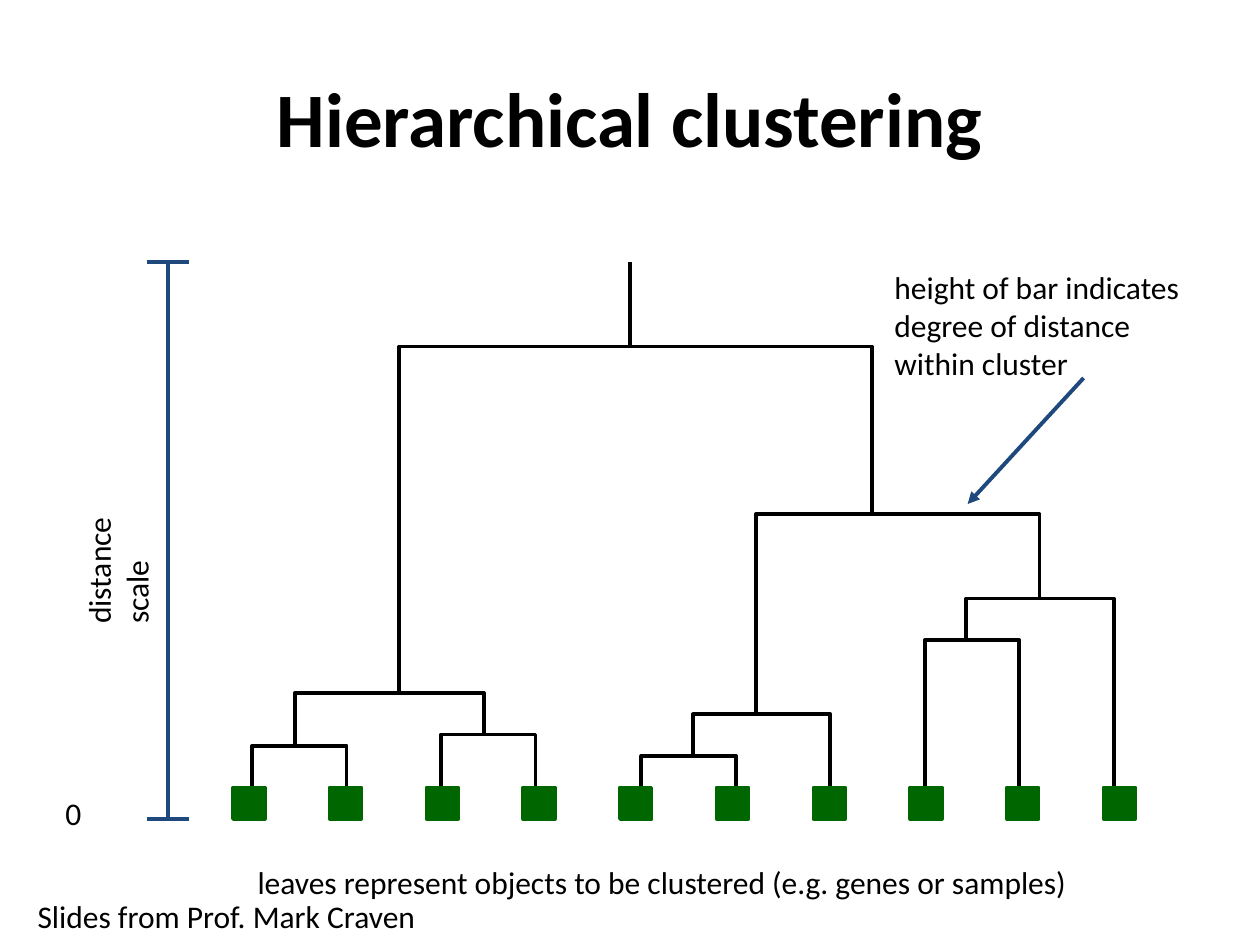
from lxml import etree
from pptx import Presentation
from pptx import util as u
from pptx.dml.color import RGBColor
from pptx.enum import shapes, text
from pptx.oxml import ns

BLACK, BLUE, GREEN = "000000", "1F497D", "006600"
LEAF_COUNT, LEAF_SIZE = 10, 0.25
LEAF_Y = 4.25
MERGES = [
    (0.15, LEAF_Y, 3.84, 0.9, LEAF_Y),
    (1.65, LEAF_Y, 3.75, 2.4, LEAF_Y),
    (0.49, 3.84, 3.42, 1.99, 3.75),
    (3.24, LEAF_Y, 3.92, 3.99, LEAF_Y),
    (3.65, 3.92, 3.59, 4.74, LEAF_Y),
    (5.49, LEAF_Y, 3, 6.24, LEAF_Y),
    (5.82, 3, 2.67, 6.99, LEAF_Y),
    (4.15, 3.59, 2, 6.4, 2.67),
    (1.32, 3.42, 0.67, 5.07, 2),
]


def rgb(value):
    """Turn a hex string into a colour."""
    return RGBColor.from_string(value)


def set_line(sp, color):
    """Give a shape or connector its stroke."""
    sp.line.color.rgb = rgb(color)
    sp.line.width = u.Pt(2.25)


def add_text(parent, box, lines, size=18, bold=False, align=text.PP_ALIGN.LEFT,
             anchor=text.MSO_ANCHOR.TOP, wrap=False, rotation=0):
    """Place a text box with one paragraph for each line."""
    sp = parent.add_textbox(*map(u.Inches, box))
    sp.rotation = rotation
    tf = sp.text_frame
    tf.word_wrap = wrap
    tf.vertical_anchor = anchor
    tf.text = "\n".join(lines)
    for p in tf.paragraphs:
        p.alignment = align
        p.font.name = "Calibri"
        p.font.size = u.Pt(size)
        p.font.bold = bold
        p.font.color.rgb = rgb(BLACK)


def add_line(parent, start, end, color, arrow=False):
    """Draw a straight line, with an arrowhead at its end if asked."""
    sp = parent.add_connector(shapes.MSO_CONNECTOR.STRAIGHT, *map(u.Inches, start + end))
    set_line(sp, color)
    if arrow:
        etree.SubElement(sp.line._get_or_add_ln(), ns.qn("a:tailEnd"), type="triangle")
    etree.SubElement(sp._element.spPr, ns.qn("a:effectLst"))


def add_merge(parent, points):
    """Draw an open bracket through the points."""
    points = [tuple(map(u.Inches, point)) for point in points]
    builder = parent.build_freeform(*points[0])
    builder.add_line_segments(points[1:], close=False)
    sp = builder.convert_to_shape()
    sp.fill.background()
    sp.shadow.inherit = False
    set_line(sp, BLACK)


def add_dendrogram(parent, left, top, width, height):
    """Draw the merges, the root and the evenly spaced leaves in the box."""
    group = parent.add_group_shape().shapes
    for x1, y1, bar, x2, y2 in MERGES:
        path = [(x1, y1), (x1, bar), (x2, bar), (x2, y2)]
        add_merge(group, [(left + x, top + y) for x, y in path])
    pitch = (width - LEAF_SIZE) / (LEAF_COUNT - 1)
    for i in range(LEAF_COUNT):
        box = left + i * pitch, top + height - LEAF_SIZE, LEAF_SIZE, LEAF_SIZE
        sp = group.add_shape(shapes.MSO_SHAPE.RECTANGLE, *map(u.Inches, box))
        sp.shadow.inherit = False
        sp.fill.solid()
        sp.fill.fore_color.rgb = rgb(GREEN)
        set_line(sp, GREEN)
    root = left + 3.15
    add_line(parent, (root, top + 0.67), (root, top), BLACK)


def add_scale(parent, left, top, width, height):
    """Draw the distance scale with its end caps and labels."""
    group = parent.add_group_shape().shapes
    middle, bottom = left + width / 2, top + height
    add_line(group, (middle, bottom), (middle, top), BLUE)
    for y in (top, bottom):
        add_line(group, (left, y), (left + width, y), BLUE)
    add_text(parent, (left - 1.18, top + 1.98, 1.58, 0.4), ["distance scale"],
             wrap=True, rotation=270)
    add_text(parent, (left - 0.75, bottom - 0.25, 0.34, 0.43), ["0"])


def add_note(parent, left, top, width, height):
    """Write the note on bar height and point it at a bar."""
    lines = ["height of bar indicates", "degree of distance", "within cluster"]
    add_text(parent, (left, top, width, height), lines, anchor=text.MSO_ANCHOR.MIDDLE)
    add_line(parent, (left + 1.6, top + 0.92), (left + 0.68, top + 1.92), BLUE, arrow=True)


def main():
    """Build the slide and save it."""
    prs = Presentation()
    prs.slide_width, prs.slide_height = u.Inches(10), u.Inches(7.5)
    s = prs.slides.add_slide(prs.slide_layouts[6])
    center, middle = text.PP_ALIGN.CENTER, text.MSO_ANCHOR.MIDDLE
    add_text(s.shapes, (0.5, 0.3, 9, 1.25), ["Hierarchical clustering"], size=44,
             bold=True, align=center, anchor=middle, wrap=True)
    add_dendrogram(s.shapes, 1.85, 2.08, 7.16, 4.42)
    add_text(s.shapes, (1.9, 6.8, 6.71, 0.4),
             ["leaves represent objects to be clustered (e.g. genes or samples)"],
             align=center, anchor=middle)
    add_note(s.shapes, 7, 2.08, 2.49, 1)
    add_scale(s.shapes, 1.17, 2.08, 0.33, 4.42)
    add_text(s.shapes, (0.2, 7.07, 3.27, 0.4), ["Slides from Prof. Mark Craven"])
    prs.save("out.pptx")


if __name__ == "__main__":
    main()
